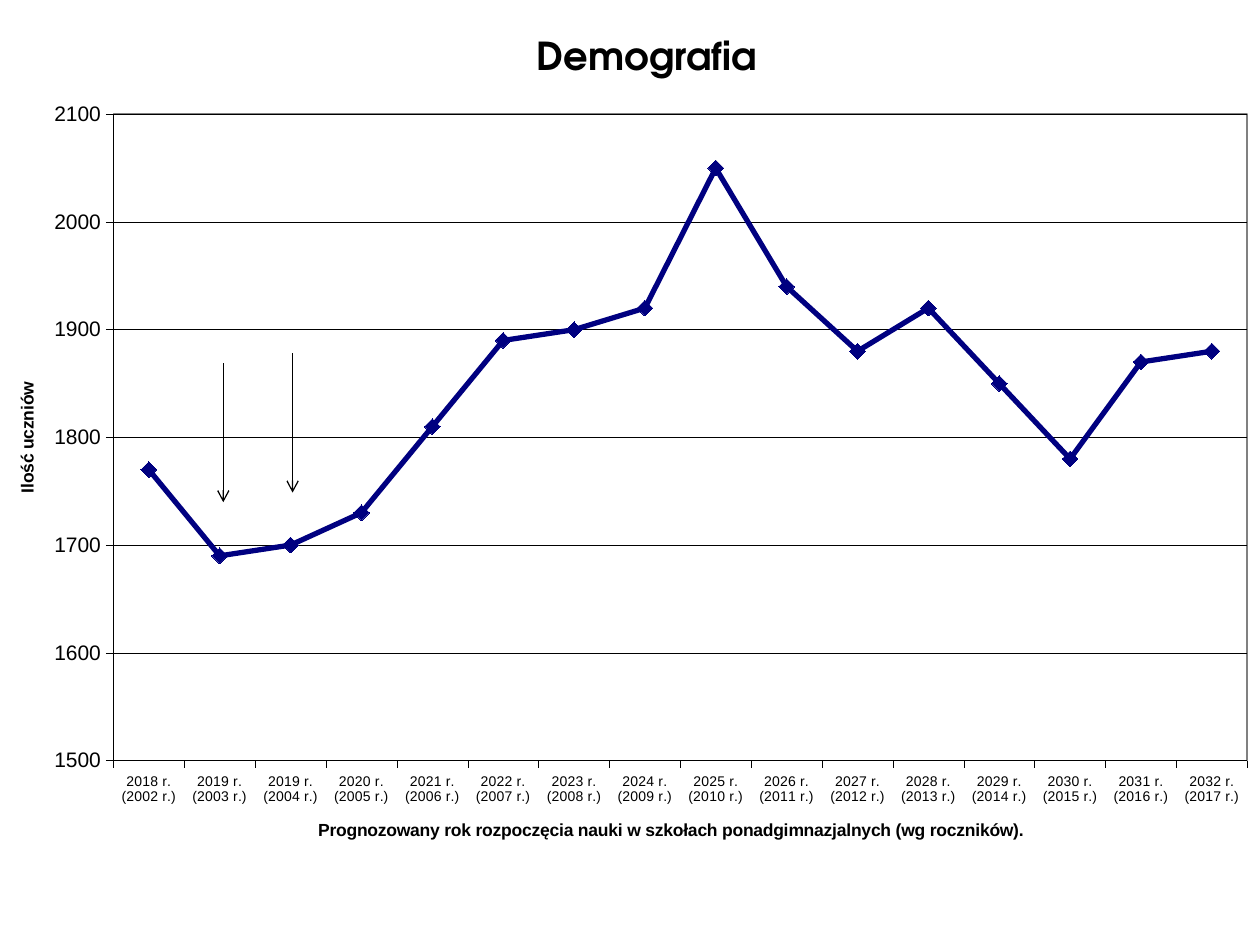
from dataclasses import dataclass

from lxml import etree
from pptx import Presentation
from pptx.chart.data import CategoryChartData
from pptx.dml.color import RGBColor
from pptx.enum.chart import XL_CHART_TYPE, XL_MARKER_STYLE, XL_TICK_MARK
from pptx.enum.shapes import MSO_CONNECTOR
from pptx.enum.text import MSO_ANCHOR, PP_ALIGN
from pptx.oxml import parse_xml
from pptx.oxml.ns import nsdecls, qn
from pptx.util import Pt

LINE_CHART = XL_CHART_TYPE.LINE_MARKERS
DIAMOND = XL_MARKER_STYLE.DIAMOND
OUTSIDE = XL_TICK_MARK.OUTSIDE
STRAIGHT = MSO_CONNECTOR.STRAIGHT
CENTER = PP_ALIGN.CENTER
MIDDLE = MSO_ANCHOR.MIDDLE


@dataclass(frozen=True)
class Theme:
    black: RGBColor = RGBColor(0, 0, 0)
    navy: RGBColor = RGBColor(0, 0, 0x80)
    white: RGBColor = RGBColor(0xFF, 0xFF, 0xFF)
    gray: RGBColor = RGBColor(0x80, 0x80, 0x80)
    head_font: str = "TeX Gyre Adventor"
    body_font: str = "Arial"
    head: int = 22
    axis: int = 12
    label: int = 10
    small: int = 8
    thin: float = 0.25


THEME = Theme()
YEARS = [2018, *range(2019, 2033)]
YEARS.insert(1, 2019)
LABELS = [f"{year} r. ({born} r.)" for born, year in enumerate(YEARS, 2002)]
PUPILS = [1770, 1690, 1700, 1730, 1810, 1890, 1900, 1920,
          2050, 1940, 1880, 1920, 1850, 1780, 1870, 1880]


def set_font(font, size, name=THEME.body_font, bold=False):
    font.size, font.name, font.bold = Pt(size), name, bold
    font.color.rgb = THEME.black


def set_line(line, color, width):
    line.color.rgb = color
    line.width = Pt(width)


def set_layout(node, index, **spots):
    for old in node.findall(qn("c:layout")):
        node.remove(old)
    layout = etree.Element(qn("c:layout"))
    manual = etree.SubElement(layout, qn("c:manualLayout"))
    if "w" in spots:
        etree.SubElement(manual, qn("c:layoutTarget"), val="inner")
    for key in ("x", "y"):
        etree.SubElement(manual, qn(f"c:{key}Mode"), val="edge")
    for key, value in spots.items():
        etree.SubElement(manual, qn(f"c:{key}"), val=str(value))
    node.insert(index, layout)


def style_axis(axis, size, text, turn, x, y):
    axis.major_tick_mark = OUTSIDE
    set_line(axis.format.line, THEME.black, THEME.thin)
    set_font(axis.tick_labels.font, size)
    axis._element.find(qn("c:txPr")).find(qn("a:bodyPr")).set("rot", "0")
    title = axis.axis_title
    title.text_frame.text = text
    set_font(title.text_frame.paragraphs[0].font, THEME.label, bold=True)
    title._element.find(".//" + qn("a:bodyPr")).set("rot", str(turn))
    set_layout(title._element, 1, x=x, y=y)


def add_title(slide, left, top, width, height):
    frame = slide.shapes.add_textbox(
        Pt(left), Pt(top), Pt(width), Pt(height)).text_frame
    frame.word_wrap = True
    frame.vertical_anchor = MIDDLE
    para = frame.paragraphs[0]
    para.text = "Demografia"
    para.alignment = CENTER
    set_font(para.font, THEME.head, THEME.head_font, True)


def add_graph(slide, left, top, width, height):
    data = CategoryChartData()
    data.categories = LABELS
    data.add_series("Series 1", PUPILS)
    chart = slide.shapes.add_chart(
        LINE_CHART, Pt(left), Pt(top), Pt(width), Pt(height), data).chart
    chart.has_legend = chart.has_title = False
    set_font(chart.font, THEME.label)

    style_axis(
        chart.category_axis, THEME.small,
        "Prognozowany rok rozpoczęcia nauki w szkołach "
        "ponadgimnazjalnych (wg roczników).", 0, 0.25, 0.94)
    scale = chart.value_axis
    style_axis(scale, THEME.axis, "Ilość uczniów", -5400000, 0.01, 0.38)
    scale.minimum_scale, scale.maximum_scale = 1500, 2100
    scale.major_unit = 100
    set_line(scale.major_gridlines.format.line, THEME.black, THEME.thin)

    chart.plots[0].vary_by_categories = False
    series = chart.plots[0].series[0]
    series.smooth = False
    set_line(series.format.line, THEME.navy, 3)
    marker = series.marker
    marker.style, marker.size = DIAMOND, 9
    marker.format.fill.solid()
    marker.format.fill.fore_color.rgb = THEME.navy
    set_line(marker.format.line, THEME.navy, THEME.thin)

    area = chart._chartSpace.find(".//" + qn("c:plotArea"))
    set_layout(area, 0, x=0.09, y=0.04, w=0.9, h=0.83)
    area.append(parse_xml(
        f'<c:spPr {nsdecls("c", "a")}>'
        f'<a:solidFill><a:srgbClr val="{THEME.white}"/></a:solidFill>'
        f'<a:ln w="12700"><a:solidFill><a:srgbClr val="{THEME.gray}"/>'
        '</a:solidFill></a:ln></c:spPr>'))


def add_arrow(slide, left, top, height):
    arrow = slide.shapes.add_connector(
        STRAIGHT, Pt(left), Pt(top), Pt(left), Pt(top + height))
    set_line(arrow.line, THEME.black, 0.75)
    props = arrow._element.spPr
    etree.SubElement(props.find(qn("a:ln")), qn("a:tailEnd"), type="arrow")
    etree.SubElement(props, qn("a:effectLst"))


def main():
    deck = Presentation()
    deck.slide_width, deck.slide_height = Pt(720), Pt(540)
    slide = deck.slides.add_slide(deck.slide_layouts[6])
    add_title(slide, 42.5, 15, 654.5, 33)
    add_graph(slide, 0, 47.5, 720, 445)
    for left, top in ((127.6, 207.5), (167.2, 202)):
        add_arrow(slide, left, top, 79.5)
    deck.save("out.pptx")


if __name__ == "__main__":
    main()
